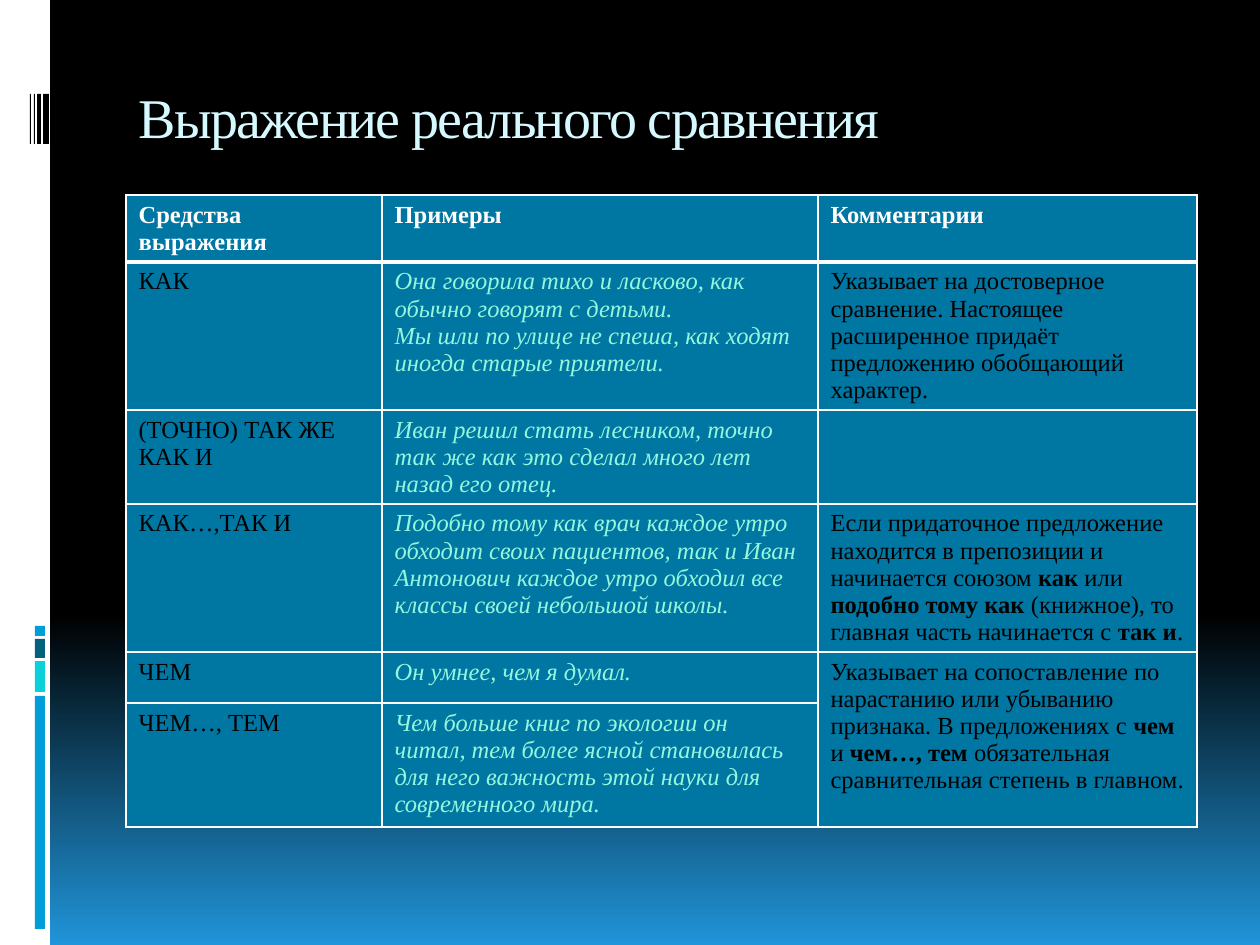
from lxml import etree
from pptx import Presentation
from pptx.dml.color import RGBColor
from pptx.enum.shapes import MSO_SHAPE
from pptx.enum.text import MSO_ANCHOR, PP_ALIGN
from pptx.oxml.ns import qn
from pptx.util import Emu, Pt

RECTANGLE = MSO_SHAPE.RECTANGLE
TOP, LEFT = MSO_ANCHOR.TOP, PP_ALIGN.LEFT
TITLE_ONLY = 5
EMU_PER_PX = 914400 / 126
FONT = "Times New Roman"
WHITE, BLACK, BLUE = "FFFFFF", "000000", "009DD9"
CELL_FILL, EXAMPLE_COLOUR = "0076A3", "94F7DC"

# Left edge decoration: left, top, width, height, colour
STRIPES = [
    (0, 0, 50, 945, WHITE),
    (35, 696, 10, 233, BLUE),
    (35, 661, 10, 31, "0BD0D9"),
    (35, 639, 10, 19, "04617B"),
    (35, 626, 10, 10, BLUE),
] + [(left, 94, width, 50, BLACK) for left, width in [(43, 6), (37, 4), (34, 1), (30, 1)]]

COLUMN_WIDTHS = [256, 436, 379]
ROW_HEIGHTS = [66, 148, 94, 148, 51, 124]

# Each cell is a list of paragraphs; each paragraph alternates plain and bold runs
ROWS = [
    [[["Средства выражения"]], [["Примеры"]], [["Комментарии"]]],
    [[["КАК"]],
     [["Она говорила тихо и ласково, как обычно говорят с детьми."],
      ["Мы шли по улице не спеша, как ходят иногда старые приятели."]],
     [["Указывает на достоверное сравнение. Настоящее расширенное придаёт "
       "предложению обобщающий характер."]]],
    [[["(ТОЧНО) ТАК ЖЕ"], ["КАК И"]],
     [["Иван решил стать лесником, точно так же как это сделал много лет назад его отец."]],
     []],
    [[["КАК…,ТАК И"]],
     [["Подобно тому как врач каждое утро обходит своих пациентов, так и Иван "
       "Антонович каждое утро обходил все классы своей небольшой школы."]],
     [["Если придаточное предложение находится в препозиции и начинается союзом ",
       "как", " или ", "подобно тому как ",
       "(книжное), то главная часть начинается с ", "так и", "."]]],
    [[["ЧЕМ"]],
     [["Он умнее, чем я думал."]],
     [["Указывает на сопоставление по нарастанию или убыванию признака. В предложениях с ",
       "чем ", "и ", "чем…, тем ", "обязательная сравнительная степень в главном."]]],
    [[["ЧЕМ…, ТЕМ"]],
     [["Чем больше книг по экологии он читал, тем более ясной становилась для него "
       "важность этой науки для современного мира."]],
     []],
]


def px(length):
    return Emu(round(length * EMU_PER_PX))


def rgb(colour):
    return RGBColor.from_string(colour)


def add_run(paragraph, text, size, colour, bold=False, italic=False):
    run = paragraph.add_run()
    run.text = text
    font = run.font
    font.name, font.size, font.bold, font.italic = FONT, Pt(size), bold, italic
    font.color.rgb = rgb(colour)
    return run


def paint_background(slide):
    fill = slide.background.fill
    fill.gradient()
    fill.gradient_angle = 270
    for stop, position, colour in zip(fill.gradient_stops, (0.65, 1), (BLACK, "2095D9")):
        stop.position = position
        stop.color.rgb = rgb(colour)


def add_stripe(slide, left, top, width, height, colour):
    stripe = slide.shapes.add_shape(RECTANGLE, px(left), px(top), px(width), px(height))
    stripe.shadow.inherit = False
    stripe.fill.solid()
    stripe.fill.fore_color.rgb = rgb(colour)
    stripe.line.fill.background()


def set_title(slide, text):
    title = slide.shapes.title
    title.left, title.top, title.width, title.height = px(126), px(70), px(1071), px(105)
    frame = title.text_frame
    frame.word_wrap = True
    frame.vertical_anchor = TOP
    frame.margin_top = px(12)
    paragraph = frame.paragraphs[0]
    paragraph.alignment = LEFT
    run = add_run(paragraph, text, 32, "D5F9FF")
    run.font._element.set("spc", "-100")


def set_borders(cell, top, bottom):
    properties = cell._tc.get_or_add_tcPr()
    for index, (side, width) in enumerate([("L", 1), ("R", 1), ("T", top), ("B", bottom)]):
        line = etree.Element(qn(f"a:ln{side}"), w=str(Pt(width)))
        fill = etree.SubElement(line, qn("a:solidFill"))
        etree.SubElement(fill, qn("a:srgbClr"), val=WHITE)
        properties.insert(index, line)


def fill_cell(cell, paragraphs, row, column):
    header, example = row == 0, row > 0 and column == 1
    colour = WHITE if header else EXAMPLE_COLOUR if example else BLACK
    cell.fill.solid()
    cell.fill.fore_color.rgb = rgb(CELL_FILL)
    set_borders(cell, top=3 if row == 1 else 1, bottom=3 if header else 1)
    frame = cell.text_frame
    for number, runs in enumerate(paragraphs):
        paragraph = frame.add_paragraph() if number else frame.paragraphs[0]
        for position, text in enumerate(runs):
            add_run(paragraph, text, 14, colour, header or position % 2 == 1, example)


def add_comparison_table(slide):
    table = slide.shapes.add_table(
        len(ROWS), len(COLUMN_WIDTHS), px(126), px(195),
        px(sum(COLUMN_WIDTHS)), px(sum(ROW_HEIGHTS))).table
    for column, width in zip(table.columns, COLUMN_WIDTHS):
        column.width = px(width)
    for row, height in zip(table.rows, ROW_HEIGHTS):
        row.height = px(height)
    for row, cells in enumerate(ROWS):
        for column, paragraphs in enumerate(cells):
            fill_cell(table.cell(row, column), paragraphs, row, column)
    # One comment covers the last two rows
    table.cell(4, 2).merge(table.cell(5, 2))


def main():
    presentation = Presentation()
    presentation.slide_width, presentation.slide_height = px(1260), px(945)
    slide = presentation.slides.add_slide(presentation.slide_layouts[TITLE_ONLY])
    paint_background(slide)
    for stripe in STRIPES:
        add_stripe(slide, *stripe)
    set_title(slide, "Выражение реального сравнения")
    add_comparison_table(slide)
    presentation.save("out.pptx")


if __name__ == "__main__":
    main()
